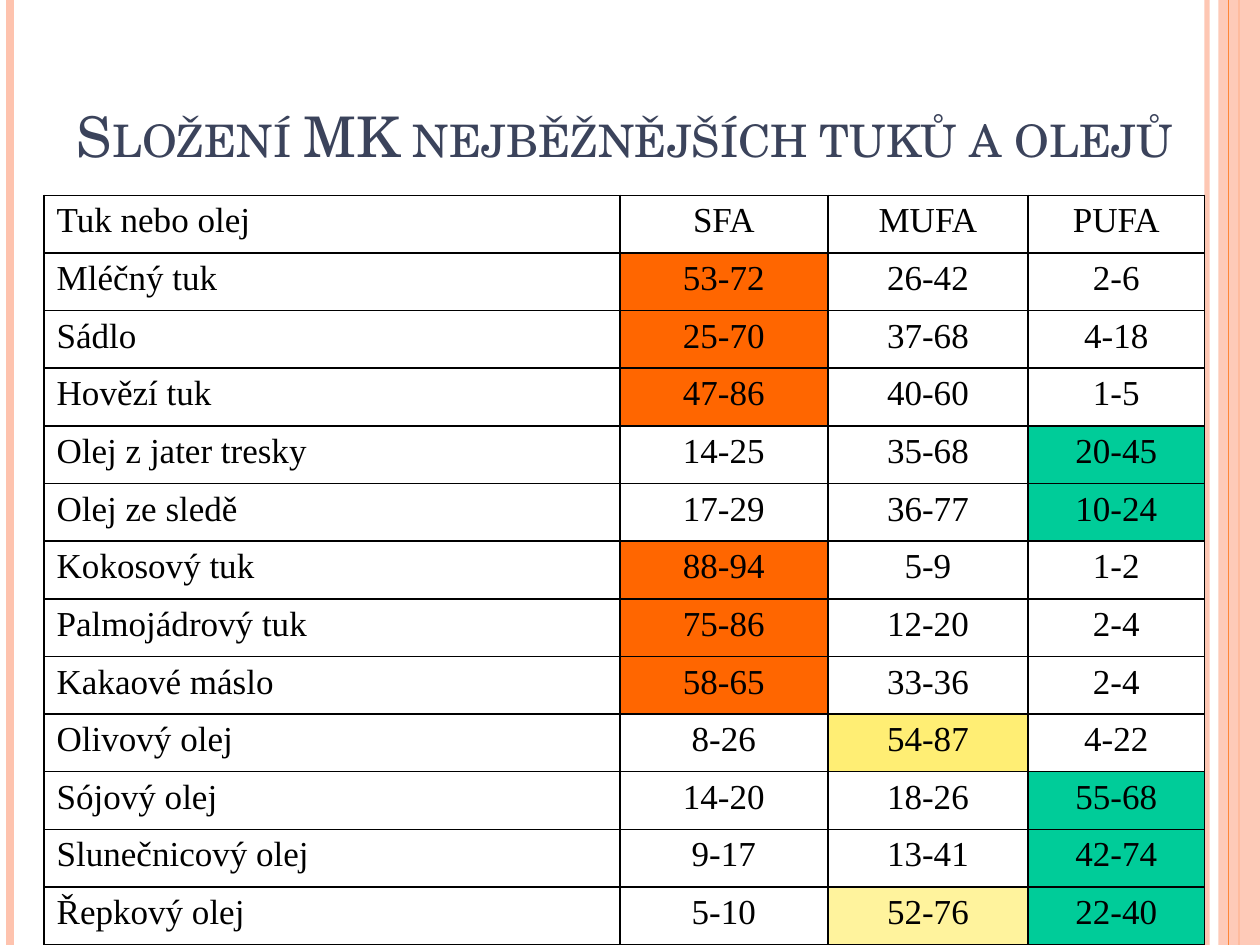
"""Builds a slide comparing the fatty acid composition of common fats and oils."""
from lxml.etree import SubElement
from pptx import Presentation
from pptx.dml.color import RGBColor
from pptx.enum.shapes import MSO_CONNECTOR, MSO_SHAPE
from pptx.enum.text import MSO_ANCHOR, MSO_AUTO_SIZE, PP_ALIGN
from pptx.oxml.ns import qn
from pptx.util import Inches, Pt

BLACK = RGBColor(0x00, 0x00, 0x00)
NAVY = RGBColor(0x3B, 0x43, 0x5B)
PEACH = RGBColor(0xFE, 0xC3, 0xAE)
ACCENT = RGBColor(0xFE, 0x86, 0x37)
ORANGE = RGBColor(0xFF, 0x66, 0x00)
GREEN = RGBColor(0x00, 0xCC, 0x99)
YELLOW = RGBColor(0xFF, 0xEE, 0x74)
PALE_YELLOW = RGBColor(0xFF, 0xF3, 0x9D)

SLIDE_HEIGHT = 7.5
COLUMN_WIDTHS = [4.57, 1.65, 1.59, 1.4]
FATS = [
    ("Tuk nebo olej", "SFA", "MUFA", "PUFA"),
    ("Mléčný tuk", "53-72", "26-42", "2-6"),
    ("Sádlo", "25-70", "37-68", "4-18"),
    ("Hovězí tuk", "47-86", "40-60", "1-5"),
    ("Olej z jater tresky", "14-25", "35-68", "20-45"),
    ("Olej ze sledě", "17-29", "36-77", "10-24"),
    ("Kokosový tuk", "88-94", "5-9", "1-2"),
    ("Palmojádrový tuk", "75-86", "12-20", "2-4"),
    ("Kakaové máslo", "58-65", "33-36", "2-4"),
    ("Olivový olej", "8-26", "54-87", "4-22"),
    ("Sójový olej", "14-20", "18-26", "55-68"),
    ("Slunečnicový olej", "9-17", "13-41", "42-74"),
    ("Řepkový olej", "5-10", "52-76", "22-40"),
]
HIGHLIGHTS = {
    **{(row, 1): ORANGE for row in (1, 2, 3, 6, 7, 8)},
    **{(row, 3): GREEN for row in (4, 5, 10, 11, 12)},
    (9, 2): YELLOW,
    (12, 2): PALE_YELLOW,
}


class FatSlide:
    """Holds the slide and its style."""

    title_font = "TeX Gyre Schola"
    table_font = "Times New Roman"

    def __init__(self, presentation):
        self.slide = presentation.slides.add_slide(presentation.slide_layouts[5])

    def set_opacity(self, element, percent):
        color = next(element.iter(qn("a:srgbClr")))
        SubElement(color, qn("a:alpha")).set("val", str(percent * 1000))

    def add_text(self, paragraph, text, font, size, color):
        run = paragraph.add_run()
        run.text = text
        run.font.name = font
        run.font.size = Pt(size)
        run.font.color.rgb = color
        return run

    def stripe(self, x, color, width, opacity=100):
        line = self.slide.shapes.add_connector(
            MSO_CONNECTOR.STRAIGHT, Inches(x), 0, Inches(x), Inches(SLIDE_HEIGHT))
        line.line.color.rgb = color
        line.line.width = Pt(width)
        properties = line._element.spPr
        SubElement(properties, qn("a:effectLst"))
        if opacity < 100:
            self.set_opacity(properties, opacity)
        return line

    def band(self, left, width, color, opacity):
        band = self.slide.shapes.add_shape(
            MSO_SHAPE.RECTANGLE, Inches(left), 0, Inches(width), Inches(SLIDE_HEIGHT))
        band.shadow.inherit = False
        band.fill.solid()
        band.fill.fore_color.rgb = color
        band.line.fill.background()
        self.set_opacity(band._element.spPr, opacity)
        return band

    def title(self, text, left, top, width, height):
        title = self.slide.shapes.title
        title.left, title.top = Inches(left), Inches(top)
        title.width, title.height = Inches(width), Inches(height)
        frame = title.text_frame
        frame.word_wrap = True
        frame.auto_size = MSO_AUTO_SIZE.NONE
        frame.vertical_anchor = MSO_ANCHOR.BOTTOM
        heading = frame.paragraphs[0]
        heading.alignment = PP_ALIGN.LEFT
        run = self.add_text(heading, text, self.title_font, 32, NAVY)
        run.font._element.set("cap", "small")

    def cell_borders(self, cell):
        properties = cell._tc.get_or_add_tcPr()
        for side in ("a:lnL", "a:lnR", "a:lnT", "a:lnB"):
            border = SubElement(properties, qn(side), w=str(Pt(1)))
            fill = SubElement(border, qn("a:solidFill"))
            SubElement(fill, qn("a:srgbClr"), val=str(BLACK))

    def table(self, rows, widths, highlights, left, top, height):
        table = self.slide.shapes.add_table(
            len(rows), len(widths), Inches(left), Inches(top),
            Inches(sum(widths)), Inches(height)).table
        table.first_row = table.horz_banding = False
        for column, width in zip(table.columns, widths):
            column.width = Inches(width)
        for r, values in enumerate(rows):
            for c, value in enumerate(values):
                cell = table.cell(r, c)
                self.cell_borders(cell)
                if (r, c) in highlights:
                    cell.fill.solid()
                    cell.fill.fore_color.rgb = highlights[r, c]
                else:
                    cell.fill.background()
                paragraph = cell.text_frame.paragraphs[0]
                paragraph.alignment = PP_ALIGN.CENTER if c else PP_ALIGN.LEFT
                self.add_text(paragraph, value, self.table_font, 20, BLACK)


def main():
    presentation = Presentation()
    presentation.slide_width = Inches(10)
    presentation.slide_height = Inches(SLIDE_HEIGHT)
    page = FatSlide(presentation)
    page.stripe(9.58, PEACH, 3, opacity=93)
    page.stripe(0.08, PEACH, 4.5)
    band_axis = page.stripe(9.83, ACCENT, 1.5)
    side_band = page.band(9.67, 0.33, PEACH, opacity=87)
    band_axis.begin_connect(side_band, 0)
    band_axis.end_connect(side_band, 2)
    page.stripe(9.75, ACCENT, 0.75)
    page.table(FATS, COLUMN_WIDTHS, HIGHLIGHTS, left=0.35, top=1.55, height=5.95)
    page.title("Složení MK nejběžnějších tuků a olejů", 0.51, 0.5, 9.21, 0.89)
    presentation.save("out.pptx")


if __name__ == "__main__":
    main()
